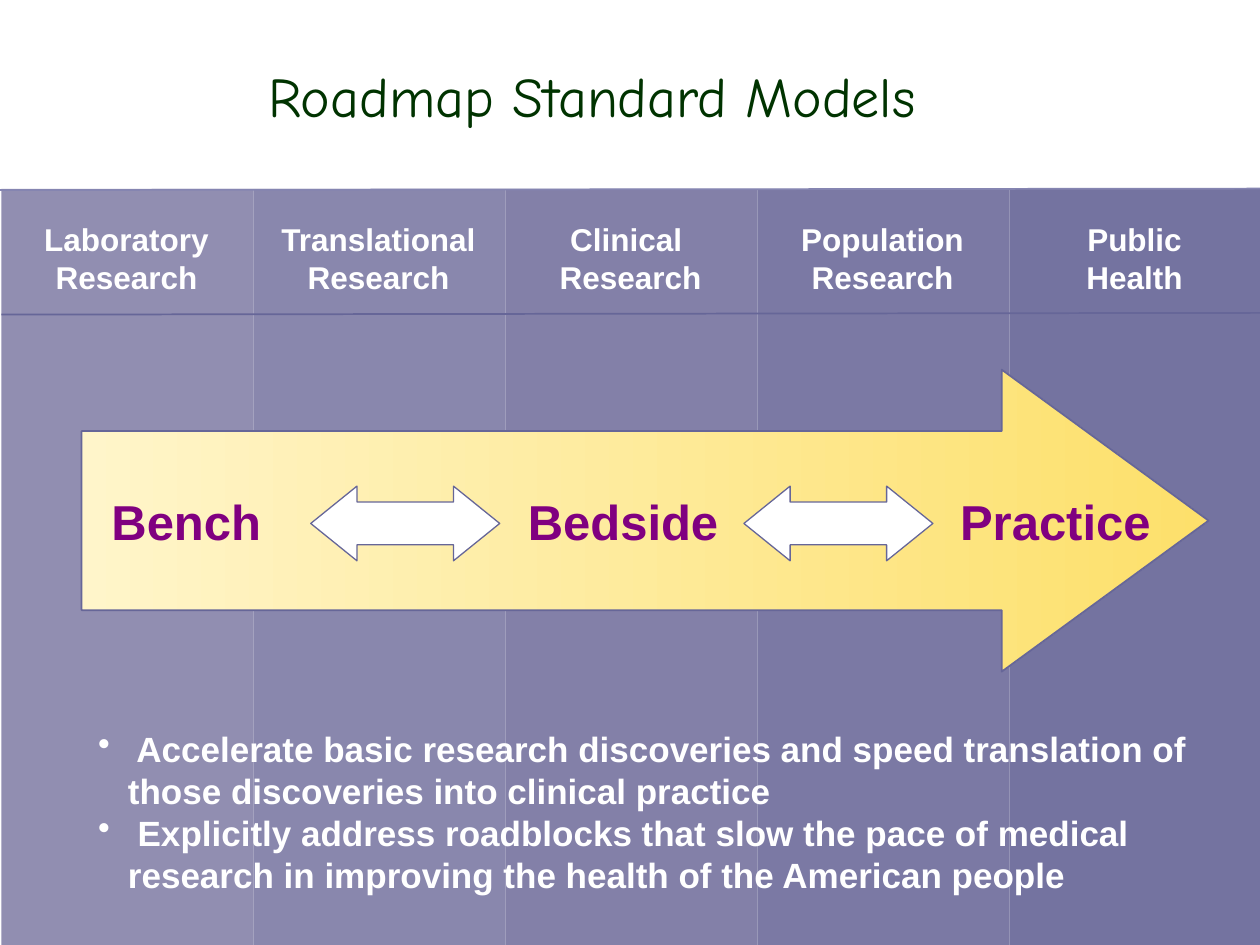
import pptx
import pptx.util
import pptx.dml.color
import pptx.enum.shapes
import pptx.enum.text
import pptx.oxml.ns
from lxml import etree

Pt = pptx.util.Pt
SHAPES = pptx.enum.shapes.MSO_SHAPE
ALIGN = pptx.enum.text.PP_ALIGN
WHITE, PURPLE, OUTLINE = "FFFFFF", "800080", "666698"
COLUMNS = [
    (["Laboratory", "Research"], "918EB1"),
    (["Translational", "Research"], "8987AD"),
    (["Clinical ", "Research"], "8380A8"),
    (["Population Research"], "7B79A4"),
    (["Public", "Health"], "7473A0"),
]
GOALS = [
    " Accelerate basic research discoveries and speed translation of those discoveries into clinical practice",
    " Explicitly address roadblocks that slow the pace of medical research in improving the health of the American people",
]


def color(value):
    return pptx.dml.color.RGBColor.from_string(value)


def write(shape, lines, size, text_color, font="Arial", bold=True, align=ALIGN.LEFT, wrap=True):
    frame = shape.text_frame
    frame.word_wrap = wrap
    frame.vertical_anchor = pptx.enum.text.MSO_ANCHOR.TOP
    frame.text = "\n".join(lines)
    for paragraph in frame.paragraphs:
        paragraph.alignment = align
        for run in paragraph.runs:
            run.font.name = font
            run.font.size = Pt(size)
            run.font.bold = bold
            run.font.color.rgb = color(text_color)


def add_text(shapes, left, top, width, height, lines, size, text_color, **options):
    shape = shapes.add_textbox(Pt(left), Pt(top), Pt(width), Pt(height))
    write(shape, lines, size, text_color, **options)
    return shape


def add_block(shapes, kind, left, top, width, height, fill=None, line_width=0, adjustments=()):
    shape = shapes.add_shape(kind, Pt(left), Pt(top), Pt(width), Pt(height))
    shape.shadow.inherit = False
    for index, value in enumerate(adjustments):
        shape.adjustments[index] = value
    if fill:
        shape.fill.solid()
        shape.fill.fore_color.rgb = color(fill)
    if line_width:
        shape.line.color.rgb = color(OUTLINE)
        shape.line.width = Pt(line_width)
    else:
        shape.line.fill.background()
    return shape


def add_rule(slide, left, top, width, rise, line_color):
    line = slide.shapes.add_connector(
        pptx.enum.shapes.MSO_CONNECTOR.STRAIGHT, Pt(left), Pt(top), Pt(left + width), Pt(top - rise))
    line.line.color.rgb = color(line_color)
    line.line.width = Pt(1)
    etree.SubElement(line._element.spPr, pptx.oxml.ns.qn("a:effectLst"))


def add_title(slide, left, top, width, height):
    title = slide.shapes.title
    title.left, title.top, title.width, title.height = Pt(left), Pt(top), Pt(width), Pt(height)
    write(title, ["Roadmap Standard Models"], 32, "003300", font="Comic Neue", bold=False, wrap=False)


def add_columns(slide, left, top, width, height):
    column_width = width / len(COLUMNS)
    for index, (heading, fill) in enumerate(COLUMNS):
        shapes = slide.shapes.add_group_shape().shapes
        column_left = left + index * column_width
        add_block(shapes, SHAPES.RECTANGLE, column_left, top, column_width, height, fill)
        add_text(shapes, column_left + 4, top + 14.4, column_width - 9, 67,
                 heading, 18, WHITE, align=ALIGN.CENTER)


def add_pathway(slide, left, top, width, height):
    arrow = add_block(slide.shapes, SHAPES.RIGHT_ARROW, left, top, width, height,
                      line_width=1, adjustments=(0.593, 0.685))
    arrow.fill.gradient()
    arrow.fill.gradient_angle = 0
    for stop, value in zip(arrow.fill.gradient_stops, ("FFF5CA", "FDE06B")):
        stop.color.rgb = color(value)
    for offset, label_width, label in ((10, 100, "Bench"), (248, 124, "Bedside"), (495, 124, "Practice")):
        add_text(slide.shapes, left + offset, top + 66.4, label_width, 41, [label], 28, PURPLE, wrap=False)
    for offset in (131, 378.5):
        add_block(slide.shapes, SHAPES.LEFT_RIGHT_ARROW, left + offset, top + 66.6, 108, 42.7,
                  WHITE, 0.75, (0.573, 0.619))


def add_goals(slide, left, top, width, height):
    box = add_text(slide.shapes, left, top, width, height, GOALS, 20, WHITE)
    for paragraph in box.text_frame.paragraphs:
        properties = paragraph._p.get_or_add_pPr()
        properties.set("marL", str(Pt(17)))
        properties.set("indent", str(-Pt(17)))
        bullet = etree.SubElement(properties, pptx.oxml.ns.qn("a:buChar"))
        bullet.set("char", "•")


def main():
    presentation = pptx.Presentation()
    presentation.slide_width, presentation.slide_height = Pt(720), Pt(540)
    slide = presentation.slides.add_slide(presentation.slide_layouts[5])
    add_title(slide, 146, 31.7, 410, 45.5)
    add_columns(slide, 0.8, 108, 720, 432)
    add_rule(slide, 0, 108.6, 720, 0.8, "8585B1")
    add_pathway(slide, 46.6, 211.2, 644, 172.6)
    add_rule(slide, 0.8, 179.8, 720, 1, OUTLINE)
    add_goals(slide, 49, 412, 644, 103)
    presentation.save("out.pptx")


if __name__ == "__main__":
    main()
